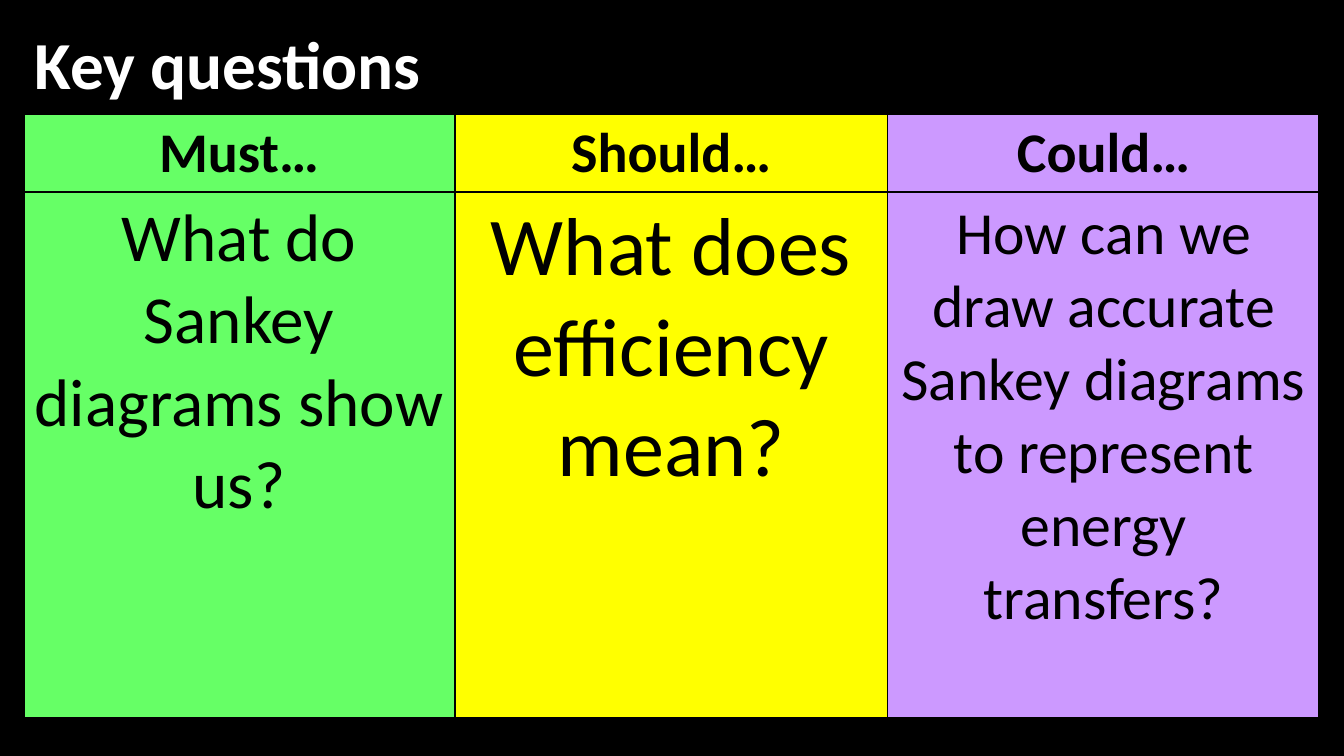
from lxml.etree import SubElement
from pptx import Presentation
from pptx.dml.color import RGBColor
from pptx.enum.text import MSO_ANCHOR, PP_ALIGN
from pptx.oxml.ns import qn
from pptx.util import Inches, Pt

COLORS = {"black": "000000", "white": "FFFFFF", "green": "66FF66",
          "yellow": "FFFF00", "purple": "CC99FF"}
QUESTIONS = [
    ("Must…", "What do Sankey diagrams show us?", 36, "green"),
    ("Should…", "What does efficiency mean?", 44, "yellow"),
    ("Could…", "How can we draw accurate Sankey diagrams to represent energy transfers?",
     32, "purple"),
]
THIN, THICK = 1, 2.25
MARGINS = {"margin_left": Inches(0.07), "margin_right": Inches(0.07),
           "margin_top": Inches(0.04), "margin_bottom": Inches(0.04)}


def color(name):
    return RGBColor.from_string(COLORS[name])


def set_all(target, values):
    for name, value in values.items():
        setattr(target, name, value)


def write(tf, text, size, bold, ink, align):
    p = tf.paragraphs[0]
    p.alignment = align
    r = p.add_run()
    r.text = text
    set_all(r.font, {"name": "Calibri", "size": Pt(size), "bold": bold})
    r.font.color.rgb = color(ink)


def add_title(s, text):
    sp = s.shapes.add_textbox(Inches(0.16), Inches(0.12), Inches(7.18), Inches(1.41))
    sp.text_frame.word_wrap = True
    write(sp.text_frame, text, 36, True, "white", PP_ALIGN.LEFT)


def add_borders(cell, widths):
    tc_pr = cell._tc.get_or_add_tcPr()
    for i, (side, width) in enumerate(widths.items()):
        line = SubElement(tc_pr, qn(f"a:ln{side}"), w=str(int(Pt(width))))
        fill = SubElement(line, qn("a:solidFill"))
        SubElement(fill, qn("a:srgbClr"), val=COLORS["black"])
        tc_pr.insert(i, line)


def fill_cell(cell, text, size, bold, fill, anchor, borders):
    set_all(cell, {**MARGINS, "vertical_anchor": anchor})
    write(cell.text_frame, text, size, bold, "black", PP_ALIGN.CENTER)
    cell.fill.solid()
    cell.fill.fore_color.rgb = color(fill)
    add_borders(cell, borders)


def add_question_table(s):
    table = s.shapes.add_table(2, len(QUESTIONS), Inches(0.17), Inches(0.85),
                               Inches(9.65), Inches(4.5)).table
    for row, height in zip(table.rows, (0.58, 3.92)):
        row.height = Inches(height)
    last = len(QUESTIONS) - 1
    for col, (heading, question, size, fill) in enumerate(QUESTIONS):
        borders = {"L": THICK if col == 0 else THIN,
                   "R": THICK if col == last else THIN, "T": THIN, "B": THIN}
        fill_cell(table.cell(0, col), heading, 30, True, fill,
                  MSO_ANCHOR.MIDDLE, borders)
        fill_cell(table.cell(1, col), question, size, False, fill,
                  MSO_ANCHOR.TOP, {**borders, "B": THICK})


def main():
    prs = Presentation()
    width = Inches(10)
    set_all(prs, {"slide_width": width, "slide_height": width * 9 // 16})
    s = prs.slides.add_slide(prs.slide_layouts[6])
    s.background.fill.solid()
    s.background.fill.fore_color.rgb = color("black")
    add_title(s, "Key questions")
    add_question_table(s)
    prs.save("out.pptx")


if __name__ == "__main__":
    main()
